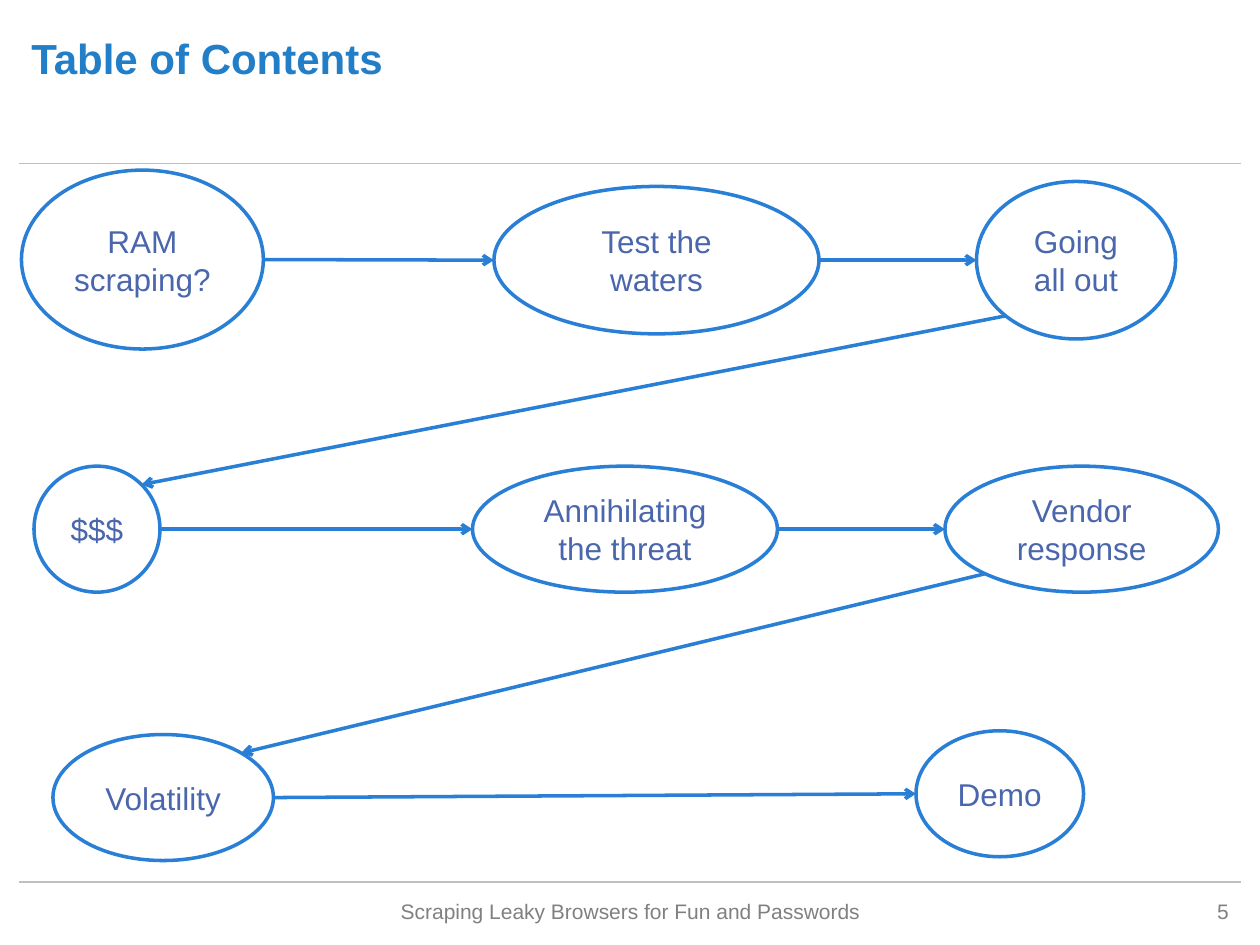
import math

from lxml import etree
from pptx import Presentation
from pptx.dml.color import RGBColor
from pptx.enum.shapes import MSO_CONNECTOR, MSO_SHAPE
from pptx.enum.text import MSO_ANCHOR, PP_ALIGN
from pptx.oxml.ns import qn
from pptx.util import Inches, Pt

STRAIGHT = MSO_CONNECTOR.STRAIGHT
OVAL = MSO_SHAPE.OVAL
TOP, MIDDLE, BOTTOM = MSO_ANCHOR.TOP, MSO_ANCHOR.MIDDLE, MSO_ANCHOR.BOTTOM
LEFT, CENTER, RIGHT = PP_ALIGN.LEFT, PP_ALIGN.CENTER, PP_ALIGN.RIGHT

COLORS = {"white": "FFFFFF", "rule": "BFBFBF", "title": "237EC8",
          "footer": "808080", "outline": "297FD5", "label": "4A66AC"}

FORMATS = {
    "title": {"size": Pt(24), "bold": True, "name": "Arial"},
    "footer": {"size": Pt(12), "bold": False, "name": "Arial"},
    "label": {"size": Pt(18), "bold": False, "name": "Arial"},
}

ROWS = [
    [("RAM scraping?", (0.17, 1.35, 1.92, 1.42)),
     ("Test the waters", (3.92, 1.48, 2.58, 1.17)),
     ("Going all out", (7.75, 1.44, 1.58, 1.25))],
    [("$$$", (0.27, 3.7, 1, 1)),
     ("Annihilating the threat", (3.75, 3.7, 2.42, 1)),
     ("Vendor response", (7.5, 3.7, 2.17, 1))],
    [("Volatility", (0.42, 5.83, 1.75, 1)),
     ("Demo", (7.27, 5.8, 1.33, 1))],
]


class SlideBuilder:
    """Draws styled elements on the current slide."""

    def __init__(self, slide):
        self.slide = slide

    def color(self, name):
        return RGBColor.from_string(COLORS[name])

    def fill_text(self, sp, text, style, align, anchor):
        tf = sp.text_frame
        tf.word_wrap = True
        tf.vertical_anchor = anchor
        p = tf.paragraphs[0]
        p.alignment = align
        r = p.add_run()
        r.text = text
        for key, value in FORMATS[style].items():
            setattr(r.font, key, value)
        r.font.color.rgb = self.color(style)

    def text(self, text, box, style, align=LEFT, anchor=TOP):
        sp = self.slide.shapes.add_textbox(*map(Inches, box))
        self.fill_text(sp, text, style, align, anchor)

    def ellipse(self, text, box):
        sp = self.slide.shapes.add_shape(OVAL, *map(Inches, box))
        sp.shadow.inherit = False
        sp.fill.solid()
        sp.fill.fore_color.rgb = self.color("white")
        sp.line.color.rgb = self.color("outline")
        sp.line.width = Pt(2)
        self.fill_text(sp, text, "label", CENTER, MIDDLE)

    def line(self, start, end, color, width, arrow=False):
        sp = self.slide.shapes.add_connector(STRAIGHT, *map(Inches, start + end))
        sp.line.color.rgb = self.color(color)
        sp.line.width = Pt(width)
        sp_pr = sp._element.spPr
        if arrow:
            etree.SubElement(sp_pr.find(qn("a:ln")), qn("a:tailEnd"), type="arrow")
        etree.SubElement(sp_pr, qn("a:effectLst"))


def rim_point(box, degrees):
    """Return the point on an ellipse at a clockwise angle from its right end."""
    x, y, w, h = box
    angle = math.radians(degrees)
    return x + w / 2 * (1 + math.cos(angle)), y + h / 2 * (1 + math.sin(angle))


def main():
    prs = Presentation()
    prs.slide_width, prs.slide_height = Inches(10), Inches(7.5)
    s = SlideBuilder(prs.slides.add_slide(prs.slide_layouts[6]))

    for y in (1.3, 7):
        s.line((0.15, y), (9.85, y), "rule", 0.75)
    s.text("Table of Contents", (0.15, 0.25, 7.95, 0.46), "title", anchor=BOTTOM)
    s.text("5", (8.99, 7.08, 0.86, 0.28), "footer", RIGHT)
    s.text("Scraping Leaky Browsers for Fun and Passwords",
           (1.53, 7.08, 6.95, 0.28), "footer", CENTER)

    previous = None
    for row in ROWS:
        for i, (label, box) in enumerate(row):
            s.ellipse(label, box)
            if previous:
                leave, arrive = (0, 180) if i else (135, -45)
                s.line(rim_point(previous, leave), rim_point(box, arrive),
                       "outline", 2, arrow=True)
            previous = box

    prs.save("out.pptx")


if __name__ == "__main__":
    main()
